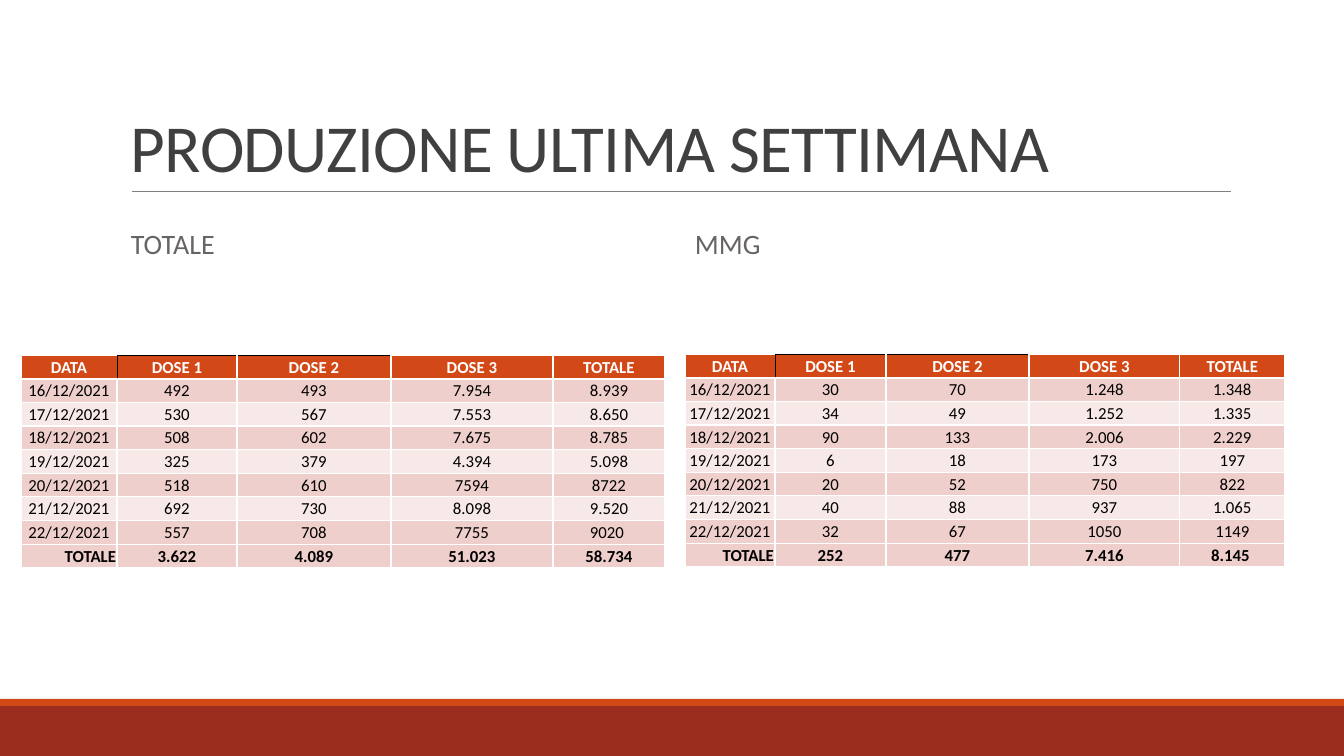
from pptx import Presentation
from pptx.dml.color import RGBColor
from pptx.enum.shapes import MSO_CONNECTOR as Connector, MSO_SHAPE as Shape
from pptx.enum.text import MSO_ANCHOR as Anchor, PP_ALIGN as Align
from pptx.oxml.ns import qn
from pptx.util import Pt
from lxml.etree import SubElement

EMU_PER_PX = 914400 / 100.8
WHITE, BLACK, ORANGE, BRICK = "FFFFFF", "000000", "D34817", "9B2D1F"
GRAY, TITLE_GRAY, LABEL_GRAY = "808080", "404040", "696464"
BANDS = ("F7E9E7", "EFCFCC")

HEADER = ("DATA", "DOSE 1", "DOSE 2", "DOSE 3", "TOTALE")
DATES = [f"{day}/12/2021" for day in range(16, 23)]
ALL_DOSES = (
    ("492", "493", "7.954", "8.939"),
    ("530", "567", "7.553", "8.650"),
    ("508", "602", "7.675", "8.785"),
    ("325", "379", "4.394", "5.098"),
    ("518", "610", "7594", "8722"),
    ("692", "730", "8.098", "9.520"),
    ("557", "708", "7755", "9020 "),
    ("3.622", "4.089", "51.023", "58.734"),
)
MMG_DOSES = (
    ("30", "70", "1.248", "1.348"),
    ("34", "49", "1.252", "1.335"),
    ("90", "133", "2.006", "2.229"),
    ("6", "18", "173", "197"),
    ("20", "52", "750", "822"),
    ("40", "88", "937", "1.065"),
    ("32", "67", "1050", "1149"),
    ("252", "477", "7.416", "8.145 "),
)


def px(*lengths):
    return [round(length * EMU_PER_PX) for length in lengths]


def color(value):
    return RGBColor.from_string(value)


def set_all(target, values):
    for name, value in values.items():
        setattr(target, name, value)


def header_borders(column):
    """Borders of a header cell; black edges frame the first two doses."""
    white, black = (WHITE, 1), (BLACK, 0.5)
    return {
        "lnL": black if column == 1 else white,
        "lnR": black if column == 0 else white,
        "lnT": black if column in (1, 2) else white,
        "lnB": (WHITE, 1.5),
    }


def body_borders(row):
    return {
        "lnL": (WHITE, 1),
        "lnR": (WHITE, 1),
        "lnT": (WHITE, 1.5 if row == 1 else 1),
        "lnB": (WHITE, 1),
    }


class SlideBuilder:
    def __init__(self, slide, font):
        self.slide = slide
        self.font = font

    def add_span(self, para, text, size, ink, bold=False, spacing=None, **layout):
        """Fill a paragraph with one run; spacing is in hundredths of a point."""
        set_all(para, layout)
        span = para.add_run()
        span.text = text
        set_all(span.font, {"name": self.font, "size": Pt(size), "bold": bold})
        span.font.color.rgb = color(ink)
        if spacing:
            span._r.get_or_add_rPr().set("spc", str(spacing))

    def bar(self, left, top, width, height, fill):
        bar = self.slide.shapes.add_shape(Shape.RECTANGLE, *px(left, top, width, height))
        bar.shadow.inherit = False
        bar.fill.solid()
        bar.fill.fore_color.rgb = color(fill)
        bar.line.fill.background()

    def rule(self, left, right, y, ink, width):
        rule = self.slide.shapes.add_connector(Connector.STRAIGHT, *px(left, y, right, y))
        rule.line.color.rgb = color(ink)
        rule.line.width = Pt(width)
        SubElement(rule._element.spPr, qn("a:effectLst"))

    def text(self, left, top, width, height, text, anchor, **style):
        box = self.slide.shapes.add_textbox(*px(left, top, width, height))
        set_all(box.text_frame, {"word_wrap": True, "vertical_anchor": anchor})
        self.add_span(box.text_frame.paragraphs[0], text, **style)

    def cell(self, cell, text, fill, borders, align, **style):
        side, bottom = px(1, 0)
        set_all(cell, {
            "margin_left": side, "margin_right": side, "margin_top": side,
            "margin_bottom": bottom, "vertical_anchor": Anchor.MIDDLE,
        })
        properties = cell._tc.get_or_add_tcPr()
        for edge, (ink, width) in borders.items():
            line = SubElement(properties, qn(f"a:{edge}"), w=str(int(Pt(width))))
            SubElement(SubElement(line, qn("a:solidFill")), qn("a:srgbClr"), val=ink)
        cell.fill.solid()
        cell.fill.fore_color.rgb = color(fill)
        self.add_span(cell.text_frame.paragraphs[0], text, size=12, alignment=align, **style)

    def dose_table(self, left, top, height, widths, doses):
        rows = [HEADER]
        rows += [(label, *counts) for label, counts in zip(DATES + ["TOTALE"], doses)]
        frame = self.slide.shapes.add_table(
            len(rows), len(widths), *px(left, top, sum(widths), height))
        table = frame.table
        set_all(table, {"first_row": False, "horz_banding": False})
        for column, width in zip(table.columns, px(*widths)):
            column.width = width
        last = len(rows) - 1
        for r, values in enumerate(rows):
            for c, value in enumerate(values):
                self.cell(
                    table.cell(r, c), value,
                    fill=ORANGE if r == 0 else BANDS[r % 2 or r == last],
                    borders=header_borders(c) if r == 0 else body_borders(r),
                    align=Align.RIGHT if (r, c) == (last, 0) else Align.CENTER,
                    ink=WHITE if r == 0 else BLACK,
                    bold=r in (0, last))


def main():
    deck = Presentation()
    deck.slide_width, deck.slide_height = px(1344, 756)
    page = SlideBuilder(deck.slides.add_slide(deck.slide_layouts[6]), "Calibri")

    page.bar(0, 706, 1344, 50, BRICK)
    page.bar(0, 699, 1344, 7, ORANGE)
    page.rule(132, 1231, 191, GRAY, 0.5)
    page.text(121, 31, 1109, 160, "PRODUZIONE ULTIMA SETTIMANA", Anchor.BOTTOM,
              size=48, ink=TITLE_GRAY, spacing=-50, line_spacing=0.85)

    for left, label in ((121, "TOTALE"), (685, "MMG")):
        page.text(left, 204, 544, 82, label, Anchor.MIDDLE, size=20, ink=LABEL_GRAY,
                  line_spacing=0.9, space_before=Pt(12), space_after=Pt(2))

    page.dose_table(21, 355, 213, (96, 120, 154, 162, 112), ALL_DOSES)
    page.dose_table(685, 354, 213, (90, 111, 143, 151, 105), MMG_DOSES)
    deck.save("out.pptx")


if __name__ == "__main__":
    main()
